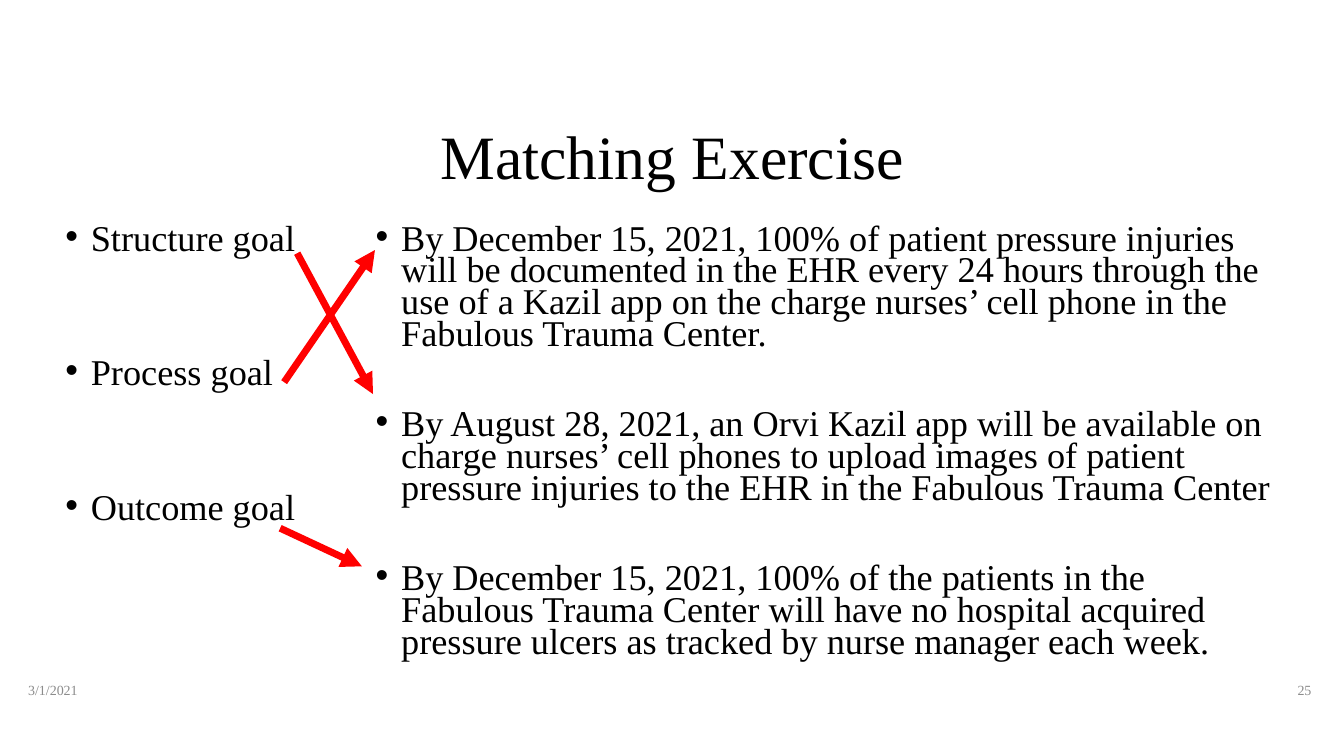
import pptx
import pptx.dml.color
import pptx.enum.shapes
import pptx.enum.text
import pptx.oxml
import pptx.oxml.ns
import pptx.util
from pptx.util import Cm

FONT = "Times New Roman"
COLOURS = {"text": "000000", "footer": "8C8C8C", "arrow": "FF0000"}
ALIGN = pptx.enum.text.PP_ALIGN
ANCHOR = pptx.enum.text.MSO_ANCHOR

GOALS = ["Structure goal", "Process goal", "Outcome goal"]
STATEMENTS = [
    "By December 15, 2021, 100% of patient pressure injuries will be documented "
    "in the EHR every 24 hours through the use of a Kazil app on the charge "
    "nurses’ cell phone in the Fabulous Trauma Center.",
    "By August 28, 2021, an Orvi Kazil app will be available on charge nurses’ "
    "cell phones to upload images of patient pressure injuries to the EHR in the "
    "Fabulous Trauma Center",
    "By December 15, 2021, 100% of the patients in the Fabulous Trauma Center "
    "will have no hospital acquired pressure ulcers as tracked by nurse manager "
    "each week.",
]
# Start and end of each arrow from a goal to its statement, in centimetres
MATCHES = [
    ((7.16, 9.63), (9.45, 6.3)),
    ((7.49, 6.38), (9.4, 9.93)),
    ((7.06, 13.31), (9.12, 14.27)),
]


def rgb(name):
    return pptx.dml.color.RGBColor.from_string(COLOURS[name])


def add_element(parent, tag, **attributes):
    element = pptx.oxml.parse_xml(f"<a:{tag} {pptx.oxml.ns.nsdecls('a')}/>")
    for key, value in attributes.items():
        element.set(key, value)
    parent.append(element)


def style(paragraph, size, colour):
    paragraph.font.name = FONT
    paragraph.font.size = pptx.util.Pt(size)
    paragraph.font.color.rgb = rgb(colour)


def add_frame(page, left, top, width, height, anchor):
    box = page.shapes.add_textbox(Cm(left), Cm(top), Cm(width), Cm(height))
    box.text_frame.word_wrap = True
    box.text_frame.vertical_anchor = anchor
    return box.text_frame


def add_line_of_text(page, text, place, size, align, colour):
    frame = add_frame(page, *place, ANCHOR.MIDDLE)
    paragraph = frame.paragraphs[0]
    paragraph.text = text
    paragraph.alignment = align
    paragraph.line_spacing = 0.9
    style(paragraph, size, colour)


def add_bullets(page, items, place, gap):
    """Add a bulleted list with the gap, in points, between its items."""
    frame = add_frame(page, *place, ANCHOR.TOP)
    for index, item in enumerate(items):
        paragraph = frame.paragraphs[0] if index == 0 else frame.add_paragraph()
        paragraph.text = item
        properties = paragraph._p.get_or_add_pPr()
        properties.set("marL", str(Cm(0.64)))
        properties.set("indent", str(-Cm(0.64)))
        add_element(properties, "buFont", typeface="Arial")
        add_element(properties, "buChar", char="•")
        paragraph.line_spacing = 0.73
        if index:
            paragraph.space_before = pptx.util.Pt(gap)
        style(paragraph, 25.9, "text")


def add_arrow(page, start, end):
    arrow = page.shapes.add_connector(
        pptx.enum.shapes.MSO_CONNECTOR.STRAIGHT,
        *(Cm(value) for value in start + end),
    )
    arrow.line.color.rgb = rgb("arrow")
    arrow.line.width = pptx.util.Pt(5)
    add_element(arrow.line._get_or_add_ln(), "tailEnd", type="triangle")
    add_element(arrow._element.spPr, "effectLst")


def main():
    deck = pptx.Presentation()
    deck.slide_width, deck.slide_height = Cm(33.87), Cm(19.05)
    page = deck.slides.add_slide(deck.slide_layouts[6])

    add_line_of_text(page, "Matching Exercise", (2.34, 2.18, 29.21, 3.68),
                     44, ALIGN.CENTER, "text")
    add_bullets(page, GOALS, (1.4, 5.56, 6.88, 11.3), 73.6)
    add_bullets(page, STATEMENTS, (9.22, 5.56, 23.27, 11.61), 41.8)
    add_line_of_text(page, "3/1/2021", (0.46, 16.89, 7.62, 1.02),
                     10, ALIGN.LEFT, "footer")
    add_line_of_text(page, "25", (25.68, 16.89, 7.62, 1.02),
                     10, ALIGN.RIGHT, "footer")
    for start, end in MATCHES:
        add_arrow(page, start, end)

    deck.save("out.pptx")


if __name__ == "__main__":
    main()
